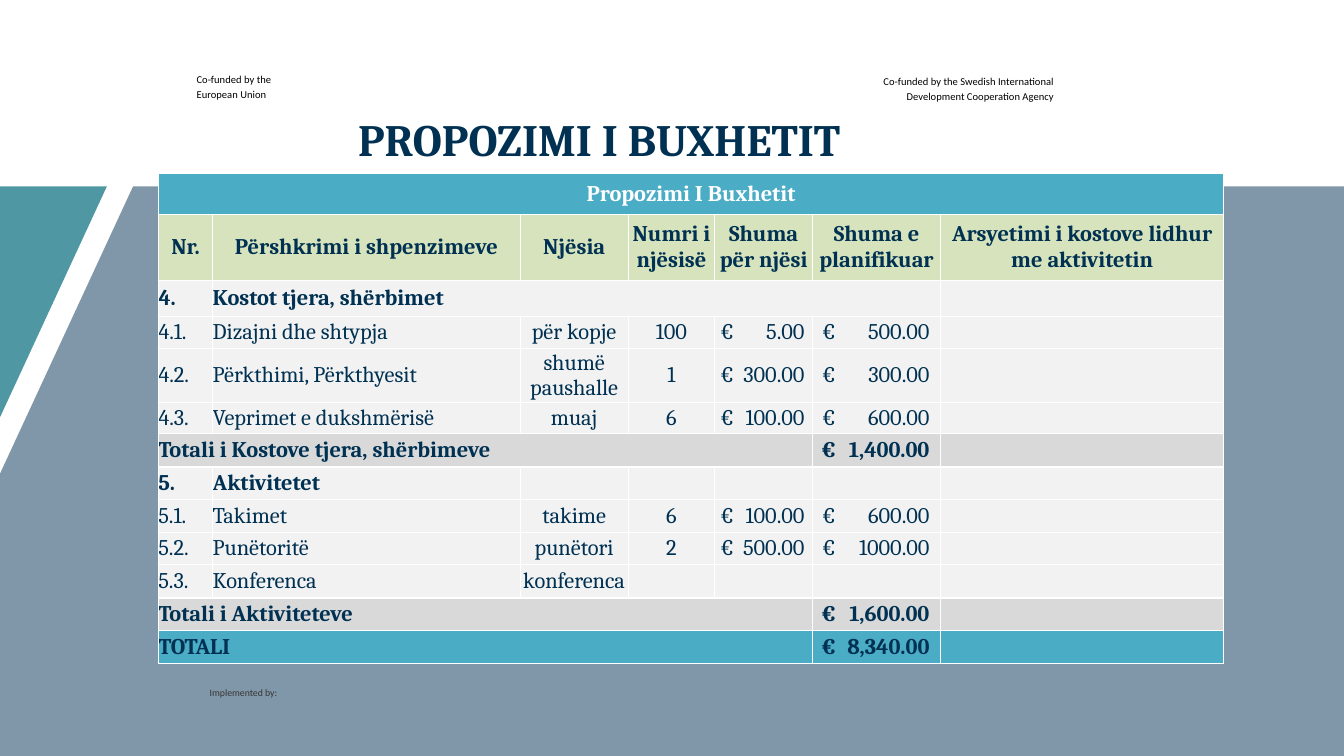
from lxml.etree import SubElement
from pptx import Presentation
from pptx.dml.color import RGBColor
from pptx.enum.text import MSO_ANCHOR, PP_ALIGN
from pptx.oxml import parse_xml
from pptx.oxml.ns import nsdecls, qn
from pptx.util import Inches, Pt

NAVY, TEAL, BLUE, WHITE = "003152", "4F97A3", "4BACC6", "FFFFFF"
GREEN, LIGHT, GREY = "D6E3BC", "F2F2F2", "D9D9D9"

COLS = [0.54, 3.05, 1.07, 0.86, 0.97, 1.27, 2.81]
ROWS = [0.41, 0.65, 0.36, 0.32, 0.52, 0.31] + [0.33, 0.32] * 3 + [0.33]

# Euro columns: left margin and right tab stop
EURO_COLS = {4: (0.05, 0.84), 5: (0.09, 1.07)}

# Each row: fill, bold, first and last merged column, cell texts
BUDGET = [
    (BLUE, True, (0, 6), ["Propozimi I Buxhetit"]),
    (GREEN, True, None, ["Nr.", "Përshkrimi i shpenzimeve", "Njësia", "Numri i njësisë",
                         "Shuma për njësi", "Shuma e planifikuar",
                         "Arsyetimi i kostove lidhur me aktivitetin"]),
    (LIGHT, True, (1, 5), ["4.", "Kostot tjera, shërbimet"]),
    (LIGHT, False, None, ["4.1.", "Dizajni dhe shtypja", "për kopje", "100", "€\t5.00", "€\t500.00"]),
    (LIGHT, False, None, ["4.2.", "Përkthimi, Përkthyesit", "shumë paushalle", "1",
                          "€\t300.00", "€\t300.00"]),
    (LIGHT, False, None, ["4.3.", "Veprimet e dukshmërisë", "muaj", "6", "€\t100.00", "€\t600.00"]),
    (GREY, True, (0, 4), ["Totali i Kostove tjera, shërbimeve", "", "", "", "", "€\t1,400.00"]),
    (LIGHT, True, None, ["5.", "Aktivitetet"]),
    (LIGHT, False, None, ["5.1.", "Takimet", "takime", "6", "€\t100.00", "€\t600.00"]),
    (LIGHT, False, None, ["5.2.", "Punëtoritë", "punëtori", "2", "€\t500.00", "€\t1000.00"]),
    (LIGHT, False, None, ["5.3.", "Konferenca", "konferenca"]),
    (GREY, True, (0, 4), ["Totali i Aktiviteteve", "", "", "", "", "€\t1,600.00"]),
    (BLUE, True, (0, 4), ["TOTALI", "", "", "", "", "€\t8,340.00"]),
]


def rgb(color):
    return RGBColor.from_string(color)


def format_paragraph(p, size, font, color, bold=False, align=PP_ALIGN.LEFT):
    p.alignment = align
    p.font.size = Pt(size)
    p.font.name = font
    p.font.bold = bold
    p.font.color.rgb = rgb(color)


def add_label(s, box, text, size, color, align=PP_ALIGN.LEFT, spacing=1.0):
    tf = s.shapes.add_textbox(*map(Inches, box)).text_frame
    tf.word_wrap = True
    tf.margin_left = tf.margin_right = tf.margin_top = tf.margin_bottom = 0
    p = tf.paragraphs[0]
    p.text = text
    p.line_spacing = spacing
    format_paragraph(p, size, "Calibri", color, align=align)


def add_polygon(s, points, color, opacity=100):
    corners = [(Inches(x), Inches(y)) for x, y in points]
    builder = s.shapes.build_freeform(*corners[0])
    builder.add_line_segments(corners[1:], close=True)
    sp = builder.convert_to_shape()
    sp.shadow.inherit = False
    sp.line.fill.background()
    sp.fill.solid()
    sp.fill.fore_color.rgb = rgb(color)
    if opacity < 100:
        srgb = sp.fill._xPr.find(".//" + qn("a:srgbClr"))
        SubElement(srgb, qn("a:alpha"), val=str(opacity * 1000))


def add_title(s, text):
    title = s.shapes.title
    title.left, title.top, title.width, title.height = map(Inches, (1.18, 0.97, 9.53, 0.88))
    tf = title.text_frame
    tf.text = text
    tf.vertical_anchor = MSO_ANCHOR.MIDDLE
    tf.paragraphs[0].line_spacing = 0.9
    format_paragraph(tf.paragraphs[0], 32, "Cambria", NAVY, True, PP_ALIGN.CENTER)


def style_cell(cell, fill):
    cell.margin_left = cell.margin_right = cell.margin_top = cell.margin_bottom = 0
    cell.vertical_anchor = MSO_ANCHOR.MIDDLE
    for side in "LRTB":
        cell._tc.get_or_add_tcPr().append(parse_xml(
            f'<a:ln{side} {nsdecls("a")} w="12700"><a:solidFill>'
            f'<a:srgbClr val="{WHITE}"/></a:solidFill></a:ln{side}>'))
    cell.fill.solid()
    cell.fill.fore_color.rgb = rgb(fill)


def write_cell(cell, text, row, col, bold):
    p = cell.text_frame.paragraphs[0]
    p.text = text
    centred = row < 2 or col in (2, 3)
    if "\t" in text:
        margin, stop = EURO_COLS[col]
        cell.margin_left = Inches(margin)
        tabs = SubElement(p._p.get_or_add_pPr(), qn("a:tabLst"))
        SubElement(tabs, qn("a:tab"), pos=str(Inches(stop)), algn="r")
    format_paragraph(p, 16, "Cambria", WHITE if row == 0 else NAVY, bold,
                     PP_ALIGN.CENTER if centred else PP_ALIGN.LEFT)


def add_budget_table(s):
    box = map(Inches, (1.57, 1.72, sum(COLS), sum(ROWS)))
    table = s.shapes.add_table(len(ROWS), len(COLS), *box).table
    table.first_row = table.horz_banding = False
    for column, width in zip(table.columns, COLS):
        column.width = Inches(width)
    for i, (fill, bold, merged, texts) in enumerate(BUDGET):
        table.rows[i].height = Inches(ROWS[i])
        for j in range(len(COLS)):
            style_cell(table.cell(i, j), fill)
        for j, text in enumerate(texts):
            if text:
                write_cell(table.cell(i, j), text, i, j, bold)
        if merged:
            table.cell(i, merged[0]).merge(table.cell(i, merged[1]))


def main():
    prs = Presentation()
    prs.slide_width, prs.slide_height = Inches(13.33), Inches(7.5)
    s = prs.slides.add_slide(prs.slide_layouts[5])

    # Background band and corner triangle
    add_polygon(s, [(1.32, 1.85), (13.33, 1.85), (13.33, 7.5), (0, 7.5), (0, 4.7)], NAVY, 50)
    add_polygon(s, [(0, 1.85), (1.06, 1.85), (0, 4.14)], TEAL)

    # Funding labels
    add_label(s, (1.95, 0.71, 1.02, 0.3), "Co-funded by the European Union",
              7.5, "000000", spacing=1.15)
    add_label(s, (8.58, 0.73, 1.87, 0.55),
              "Co-funded by the Swedish International Development Cooperation Agency",
              7.5, "000000", PP_ALIGN.RIGHT, 1.15)
    add_label(s, (2.08, 6.81, 1.42, 0.2), "Implemented by:", 7, "373435", PP_ALIGN.JUSTIFY)

    # Title and budget
    add_title(s, "PROPOZIMI I BUXHETIT")
    add_budget_table(s)
    prs.save("out.pptx")


if __name__ == "__main__":
    main()
